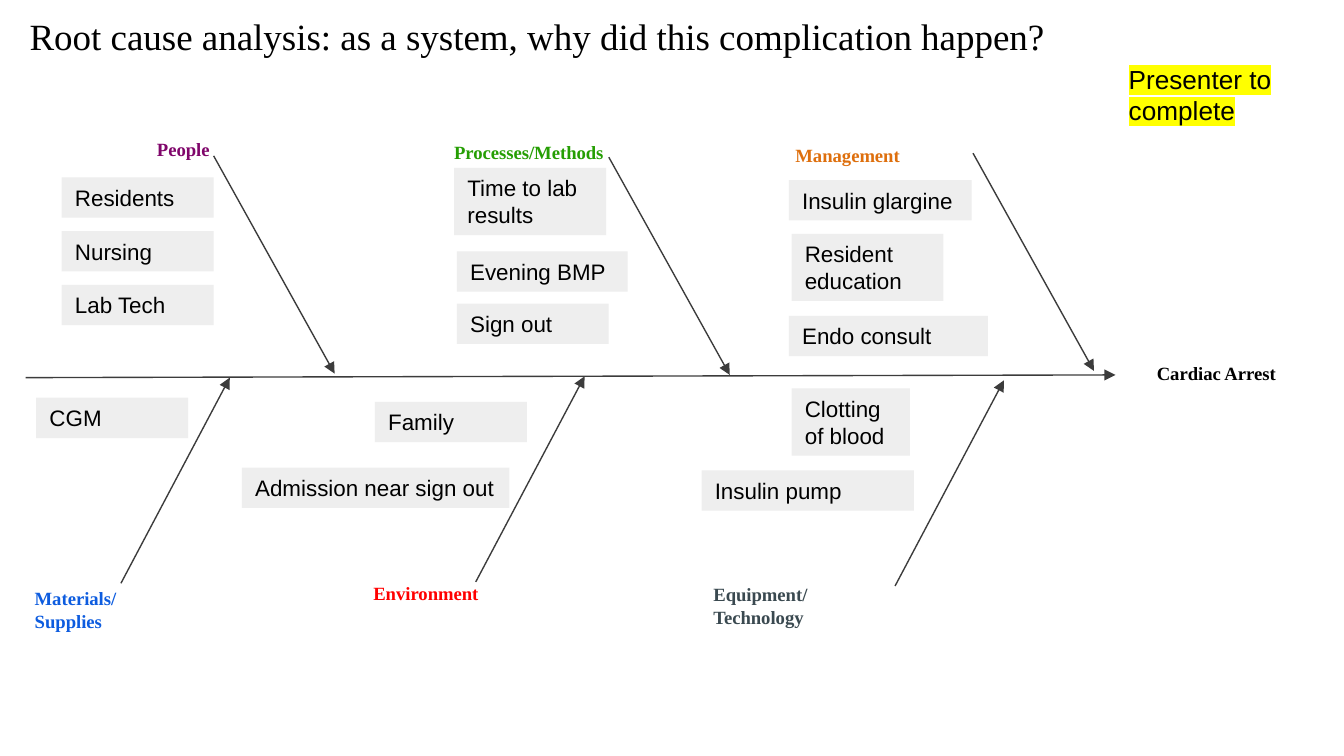
import pptx
import pptx.util
import pptx.dml.color
import pptx.enum.shapes
import pptx.enum.text
import pptx.oxml.ns
from dataclasses import dataclass
from lxml import etree

Inches = pptx.util.Inches
RGB = pptx.dml.color.RGBColor.from_string
qn = pptx.oxml.ns.qn


@dataclass(frozen=True)
class Theme:
    heading_font: str = "Times New Roman"
    body_font: str = "Arial"
    title_size: float = 19.8
    label_size: float = 10
    cause_size: float = 12
    note_size: float = 14
    ink: str = "000000"
    arrow: str = "3C3C3C"
    cause_fill: str = "EEEEEE"
    highlight: str = "FFFF00"
    people: str = "80066B"
    processes: str = "259E03"
    management: str = "DE6F0D"
    materials: str = "0D5CDF"
    environment: str = "FF0000"
    equipment: str = "3A4950"


theme = Theme()


def write(holder, text, *, size, font, color=theme.ink, bold=False, align="LEFT",
          anchor="TOP", fit="SHAPE_TO_FIT_TEXT", highlight=None):
    frame = holder.text_frame
    frame.text = text
    frame.word_wrap = True
    frame.auto_size = getattr(pptx.enum.text.MSO_AUTO_SIZE, fit)
    frame.vertical_anchor = getattr(pptx.enum.text.MSO_ANCHOR, anchor)
    for paragraph in frame.paragraphs:
        paragraph.alignment = getattr(pptx.enum.text.PP_ALIGN, align)
        for run in paragraph.runs:
            run.font.size = pptx.util.Pt(size)
            run.font.name = font
            run.font.bold = bold
            run.font.color.rgb = RGB(color)
            if highlight:
                marker = etree.Element(qn("a:highlight"))
                etree.SubElement(marker, qn("a:srgbClr"), val=highlight)
                run.font._element.find(qn("a:solidFill")).addnext(marker)


def draw_arrow(start_x, start_y, end_x, end_y):
    arrow = slide.shapes.add_connector(
        pptx.enum.shapes.MSO_CONNECTOR.STRAIGHT,
        Inches(start_x), Inches(start_y), Inches(end_x), Inches(end_y))
    arrow.line.color.rgb = RGB(theme.arrow)
    arrow.line.width = pptx.util.Pt(0.75)
    etree.SubElement(arrow.line._get_or_add_ln(), qn("a:tailEnd"), type="triangle")
    etree.SubElement(arrow._element.spPr, qn("a:effectLst"))


deck = pptx.Presentation()
deck.slide_width = Inches(10)
deck.slide_height = deck.slide_width * 9 // 16
slide = deck.slides.add_slide(deck.slide_layouts[5])

question = slide.shapes.title
question.left, question.top = Inches(-0.38), Inches(0)
question.width, question.height = Inches(8.74), Inches(0.54)
write(question, "Root cause analysis: as a system, why did this complication happen?",
      size=theme.title_size, font=theme.heading_font, anchor="TOP", fit="NONE")
question.text_frame.margin_left = question.text_frame.margin_right = Inches(0.1)
question.text_frame.margin_top = question.text_frame.margin_bottom = Inches(0.1)
question_format = question.text_frame.paragraphs[0]._p.get_or_add_pPr()
question_format.set("marL", "0")
question_format.set("indent", str(Inches(0.5)))

categories = [
    ("Cardiac Arrest", 8.25, 2.64, 1.6, 0.27, theme.ink, "CENTER"),
    ("Management", 5.82, 1.02, 2.15, 0.27, theme.management, "LEFT"),
    ("Environment", 2.68, 4.28, 1.3, 0.27, theme.environment, "LEFT"),
    ("Processes/Methods", 3.28, 1, 2.15, 0.27, theme.processes, "LEFT"),
    ("Materials/\nSupplies", 0.16, 4.32, 0.99, 0.44, theme.materials, "LEFT"),
    ("People", 1.07, 0.98, 0.73, 0.27, theme.people, "LEFT"),
    ("Equipment/\nTechnology", 5.21, 4.29, 1.04, 0.44, theme.equipment, "LEFT"),
]
for name, left, top, width, height, color, align in categories:
    category = slide.shapes.add_textbox(Inches(left), Inches(top), Inches(width), Inches(height))
    write(category, name, size=theme.label_size, font=theme.heading_font,
          color=color, bold=True, align=align)

draw_arrow(0.19, 2.81, 8.3, 2.79)
for bone_x, bone_y in [(0.9, 4.34), (3.54, 4.33), (6.66, 4.36)]:
    draw_arrow(bone_x, bone_y, bone_x + 0.81, bone_y - 1.53)
for bone_x, bone_y in [(1.59, 1.16), (4.53, 1.17), (7.24, 1.14)]:
    draw_arrow(bone_x, bone_y, bone_x + 0.9, bone_y + 1.62)

presenter_note = slide.shapes.add_textbox(Inches(8.3), Inches(0.42), Inches(1.7), Inches(0.57))
write(presenter_note, "Presenter to complete", size=theme.note_size,
      font=theme.body_font, highlight=theme.highlight)

one_line, two_lines = 0.3, 0.5
people_causes = [
    (name, 0.46, 1.32 + 0.4 * row, 1.13, one_line)
    for row, name in enumerate(["Residents", "Nursing", "Lab Tech"])
]
causes = people_causes + [
    ("Insulin pump", 5.22, 3.5, 1.58, one_line),
    ("Clotting of blood", 5.89, 2.89, 0.88, two_lines),
    ("Time to lab results", 3.38, 1.25, 1.13, two_lines),
    ("CGM", 0.27, 2.96, 1.13, one_line),
    ("Insulin glargine", 5.87, 1.34, 1.36, one_line),
    ("Resident education", 5.89, 1.74, 1.13, two_lines),
    ("Evening BMP", 3.4, 1.87, 1.27, one_line),
    ("Sign out", 3.4, 2.26, 1.13, one_line),
    ("Endo consult", 5.87, 2.35, 1.48, one_line),
    ("Family", 2.79, 2.99, 1.13, one_line),
    ("Admission near sign out", 1.8, 3.48, 1.99, one_line),
]
for name, left, top, width, height in causes:
    cause = slide.shapes.add_shape(
        pptx.enum.shapes.MSO_SHAPE.RECTANGLE,
        Inches(left), Inches(top), Inches(width), Inches(height))
    cause.shadow.inherit = False
    cause.fill.solid()
    cause.fill.fore_color.rgb = RGB(theme.cause_fill)
    cause.line.fill.background()
    write(cause, name, size=theme.cause_size, font=theme.body_font)

deck.save("out.pptx")
